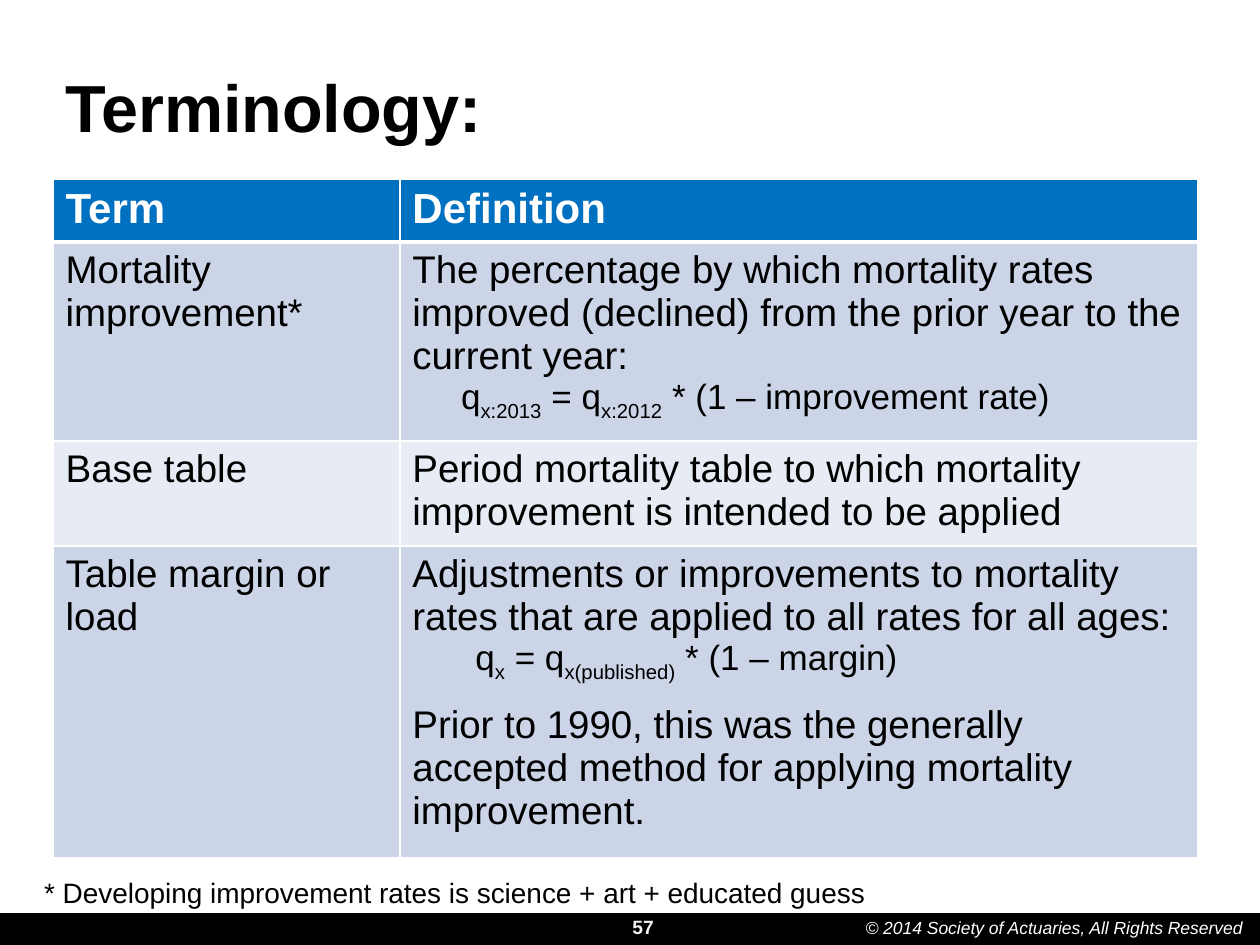
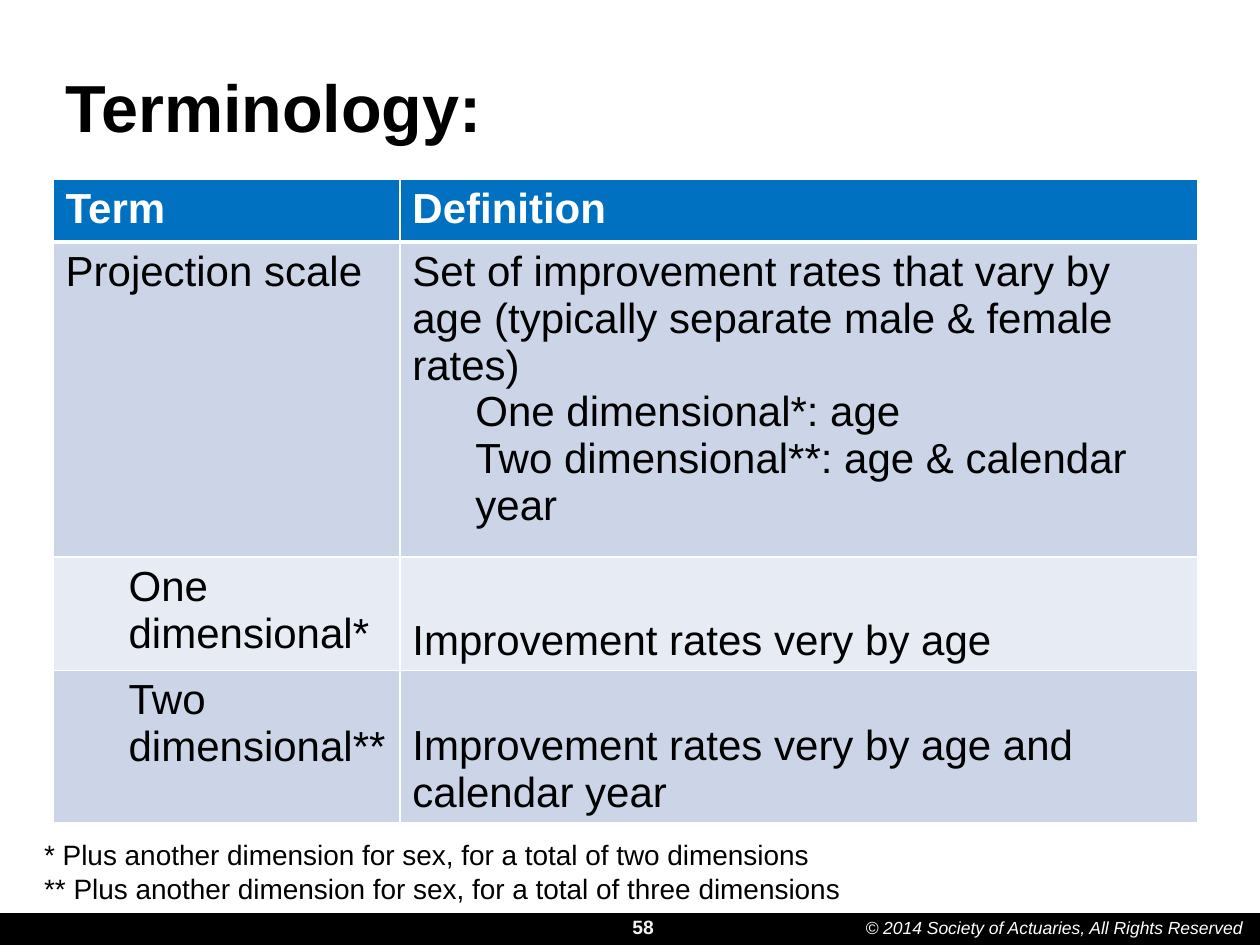
from dataclasses import dataclass

from lxml.etree import SubElement
from pptx import Presentation
from pptx.dml.color import RGBColor
from pptx.enum.shapes import MSO_SHAPE as Shape
from pptx.enum.text import MSO_ANCHOR as Anchor, PP_ALIGN as Align
from pptx.oxml.ns import qn
from pptx.util import Cm, Pt

FONT = "Arial"
BLACK, WHITE, PALE_GREY = "000000", "FFFFFF", "F2F2F2"
HEADER_BLUE = "0070C0"
BANDS = ["CCD5E8", "E7EBF4"]
TITLE_BOX = (1.07, 1.07, 23.06, 2.11)
FOOTER_BOX = (0, 18.41, 25.4, 0.64)
TABLE_LEFT, TABLE_TOP = 1.07, 3.61
COLUMN_WIDTHS = [6.99, 16.08]
HEADER_HEIGHT = 1.18
NOTE_LEFT, NOTE_WIDTH = 0.64, 17.58


@dataclass
class Line:
    """A paragraph; text between bars is set as a subscript."""
    text: str
    size: float
    indent: float = 0
    before: float = 0


@dataclass
class Entry:
    """A table row with its term, its definition and its height."""
    term: Line
    definition: list
    height: float
    anchor: Anchor = Anchor.TOP


def color(value):
    """Return the colour for a hex string."""
    return RGBColor.from_string(value)


def write(frame, lines, ink=BLACK, bold=False, italic=False, align=Align.LEFT):
    """Fill a text frame with lines, run by run."""
    for index, line in enumerate(lines):
        paragraph = frame.paragraphs[0] if index == 0 else frame.add_paragraph()
        paragraph.alignment = align
        if line.indent:
            paragraph._p.get_or_add_pPr().set("marL", str(Cm(line.indent)))
        if line.before:
            paragraph.space_before = Pt(line.before)
        for part, text in enumerate(line.text.split("|")):
            run = paragraph.add_run()
            run.text = text
            font = run.font
            font.name, font.size = FONT, Pt(line.size)
            font.bold, font.italic = bold, italic
            font.color.rgb = color(ink)
            if part % 2:
                run._r.get_or_add_rPr().set("baseline", "-25000")


def add_text(slide, box, lines, anchor=Anchor.TOP, wrap=True, **style):
    """Add a text box at a box given in centimetres."""
    frame = slide.shapes.add_textbox(*map(Cm, box)).text_frame
    frame.word_wrap = wrap
    frame.vertical_anchor = anchor
    write(frame, lines, **style)


def add_footer(slide, box, number):
    """Add the black band with page number and copyright line."""
    left, top, width, height = box
    band = slide.shapes.add_shape(Shape.RECTANGLE, *map(Cm, box))
    band.shadow.inherit = False
    band.fill.solid()
    band.fill.fore_color.rgb = color(BLACK)
    band.line.color.rgb = color(BLACK)
    band.line.width = Pt(0.75)
    add_text(slide, (left + 11.96, top - 0.2, 1.47, height + 0.2), [Line(str(number), 11)],
             anchor=Anchor.BOTTOM, ink=PALE_GREY, bold=True, align=Align.RIGHT)
    add_text(slide, (left + width - 8.2, top - 0.05, 8.2, height + 0.05),
             [Line("© 2014 Society of Actuaries, All Rights Reserved", 10)],
             wrap=False, ink=WHITE, italic=True)


def style_cell(cell, fill, top, bottom):
    """Give a cell white borders and a plain fill."""
    properties = cell._tc.get_or_add_tcPr()
    for side, width in (("lnL", 1), ("lnR", 1), ("lnT", top), ("lnB", bottom)):
        border = SubElement(properties, qn(f"a:{side}"), w=str(Pt(width)))
        solid = SubElement(border, qn("a:solidFill"))
        SubElement(solid, qn("a:srgbClr"), val=WHITE)
    cell.fill.solid()
    cell.fill.fore_color.rgb = color(fill)


def add_glossary(slide, left, top, entries):
    """Add the table of terms and definitions."""
    heights = [HEADER_HEIGHT] + [entry.height for entry in entries]
    box = (left, top, sum(COLUMN_WIDTHS), sum(heights))
    table = slide.shapes.add_table(len(heights), len(COLUMN_WIDTHS), *map(Cm, box)).table
    for column, width in zip(table.columns, COLUMN_WIDTHS):
        column.width = Cm(width)
    for row, height in zip(table.rows, heights):
        row.height = Cm(height)
    for cell, heading in zip(table.rows[0].cells, ("Term", "Definition")):
        style_cell(cell, HEADER_BLUE, 1, 3)
        write(cell.text_frame, [Line(heading, 24)], ink=WHITE, bold=True)
    for index, entry in enumerate(entries):
        term, definition = table.rows[index + 1].cells
        for cell, lines in ((term, [entry.term]), (definition, entry.definition)):
            style_cell(cell, BANDS[index % 2], 3 if index == 0 else 1, 1)
            write(cell.text_frame, lines)
        definition.vertical_anchor = entry.anchor


def add_terminology_slide(presentation, number, entries, note_top, notes):
    """Add one terminology slide."""
    slide = presentation.slides.add_slide(presentation.slide_layouts[6])
    add_footer(slide, FOOTER_BOX, number)
    add_text(slide, TITLE_BOX, [Line("Terminology:", 38)], anchor=Anchor.MIDDLE, bold=True)
    add_glossary(slide, TABLE_LEFT, TABLE_TOP, entries)
    note_box = (NOTE_LEFT, note_top, NOTE_WIDTH, 0.25 + 0.69 * len(notes))
    add_text(slide, note_box, [Line(note, 16) for note in notes])


def main():
    """Build the presentation."""
    presentation = Presentation()
    presentation.slide_width, presentation.slide_height = Cm(25.4), Cm(19.05)
    add_terminology_slide(presentation, 57, [
        Entry(Line("Mortality improvement*", 22), [
            Line("The percentage by which mortality rates improved (declined) "
                 "from the prior year to the current year:", 22),
            Line("q|x:2013| = q|x:2012| * (1 – improvement rate)", 20, indent=0.98),
        ], 3.76),
        Entry(Line("Base table", 22), [
            Line("Period mortality table to which mortality improvement "
                 "is intended to be applied", 22),
        ], 1.98),
        Entry(Line("Table margin or load", 22), [
            Line("Adjustments or improvements to mortality rates "
                 "that are applied to all rates for all ages:", 22),
            Line("q|x| = q|x(published)| * (1 – margin)", 20, indent=1.27),
            Line("Prior to 1990, this was the generally accepted method "
                 "for applying mortality improvement.", 22, before=11.5),
        ], 5.88),
    ], 17.53, ["* Developing improvement rates is science + art + educated guess"])
    add_terminology_slide(presentation, 58, [
        Entry(Line("Projection scale", 24), [
            Line("Set of improvement rates that vary by age "
                 "(typically separate male & female rates)", 24),
            Line("One dimensional*: age", 24, indent=1.27),
            Line("Two dimensional**: age & calendar year", 24, indent=1.27),
        ], 5.9),
        Entry(Line("One dimensional*", 24, indent=1.27),
              [Line("Improvement rates very by age", 24)], 2.15, Anchor.BOTTOM),
        Entry(Line("Two dimensional**", 24, indent=1.27),
              [Line("Improvement rates very by age and calendar year", 24)],
              3.07, Anchor.BOTTOM),
    ], 16.76, ["* Plus another dimension for sex, for a total of two dimensions",
               "** Plus another dimension for sex, for a total of three dimensions"])
    presentation.save("out.pptx")


if __name__ == "__main__":
    main()
